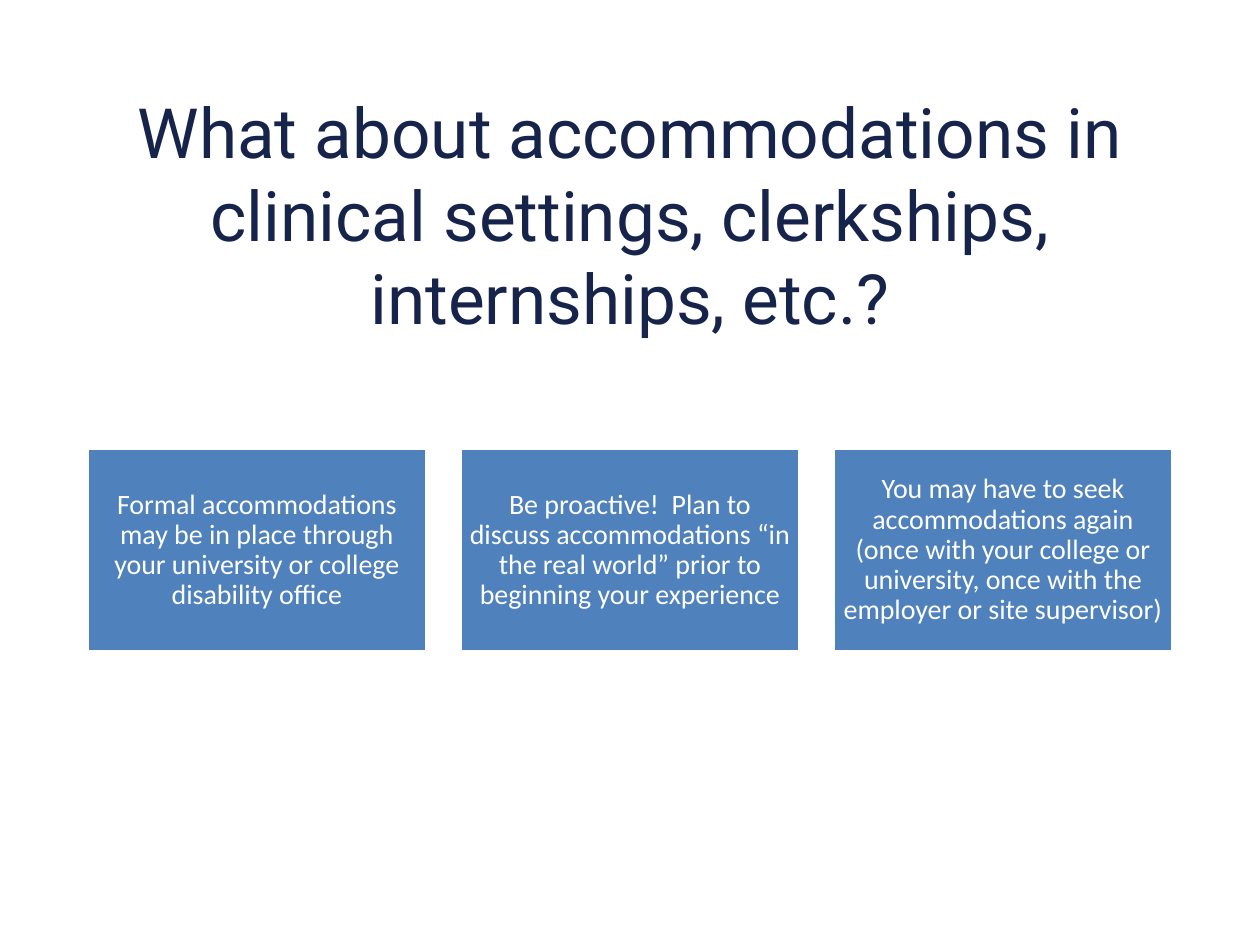
"""Build a slide on accommodations in clinical settings."""
from pptx import Presentation
from pptx.dml.color import RGBColor
from pptx.enum.shapes import MSO_SHAPE
from pptx.enum.text import MSO_ANCHOR, PP_ALIGN
from pptx.util import Cm, Pt

RECT = MSO_SHAPE.RECTANGLE
MIDDLE = MSO_ANCHOR.MIDDLE
CENTER = PP_ALIGN.CENTER
NAVY = RGBColor(0x16, 0x23, 0x4A)
BLUE = RGBColor(0x4F, 0x81, 0xBD)
WHITE = RGBColor(0xFF, 0xFF, 0xFF)

TITLE = "What about accommodations in clinical settings, clerkships, internships, etc.?"
CARDS = [
    "Formal accommodations may be in place through your university or college disability office",
    "Be proactive!  Plan to discuss accommodations “in the real world” prior to beginning your experience",
    "You may have to seek accommodations again (once with your college or university, "
    "once with the employer or site supervisor)",
]
HEAD = {"name": "Roboto", "size": Pt(39.6)}
BODY = {"name": "Calibri", "size": Pt(16)}
SIDES = ("margin_left", "margin_right", "margin_top", "margin_bottom")
PAD = dict.fromkeys(SIDES, Cm(0.18))

LEFT, SPAN = 1.75, 21.9
WIDE, HIGH, TOP = 6.86, 4.11, 9.04
STEP = (SPAN - WIDE) / (len(CARDS) - 1)


def apply(item, values):
    for key, value in values.items():
        setattr(item, key, value)


def write(shape, text, style, color, frame, para):
    box = shape.text_frame
    apply(box, {"word_wrap": True, "vertical_anchor": MIDDLE, **frame})
    line = box.paragraphs[0]
    line.text = text
    apply(line, {"alignment": CENTER, **para})
    font = line.runs[0].font
    apply(font, style)
    font.color.rgb = color


def main():
    deck = Presentation()
    apply(deck, {"slide_width": Cm(25.4), "slide_height": Cm(19.05)})
    shapes = deck.slides.add_slide(deck.slide_layouts[6]).shapes
    title = shapes.add_textbox(Cm(LEFT), Cm(3.18), Cm(SPAN), Cm(2.26))
    write(title, TITLE, HEAD, NAVY, {}, {})
    for i, text in enumerate(CARDS):
        card = shapes.add_shape(RECT, Cm(LEFT + i * STEP), Cm(TOP), Cm(WIDE), Cm(HIGH))
        card.shadow.inherit = False
        card.fill.solid()
        card.fill.fore_color.rgb = BLUE
        card.line.color.rgb = WHITE
        card.line.width = Pt(2)
        write(card, text, BODY, WHITE, PAD, {"line_spacing": 0.9})
    deck.save("out.pptx")


if __name__ == "__main__":
    main()
